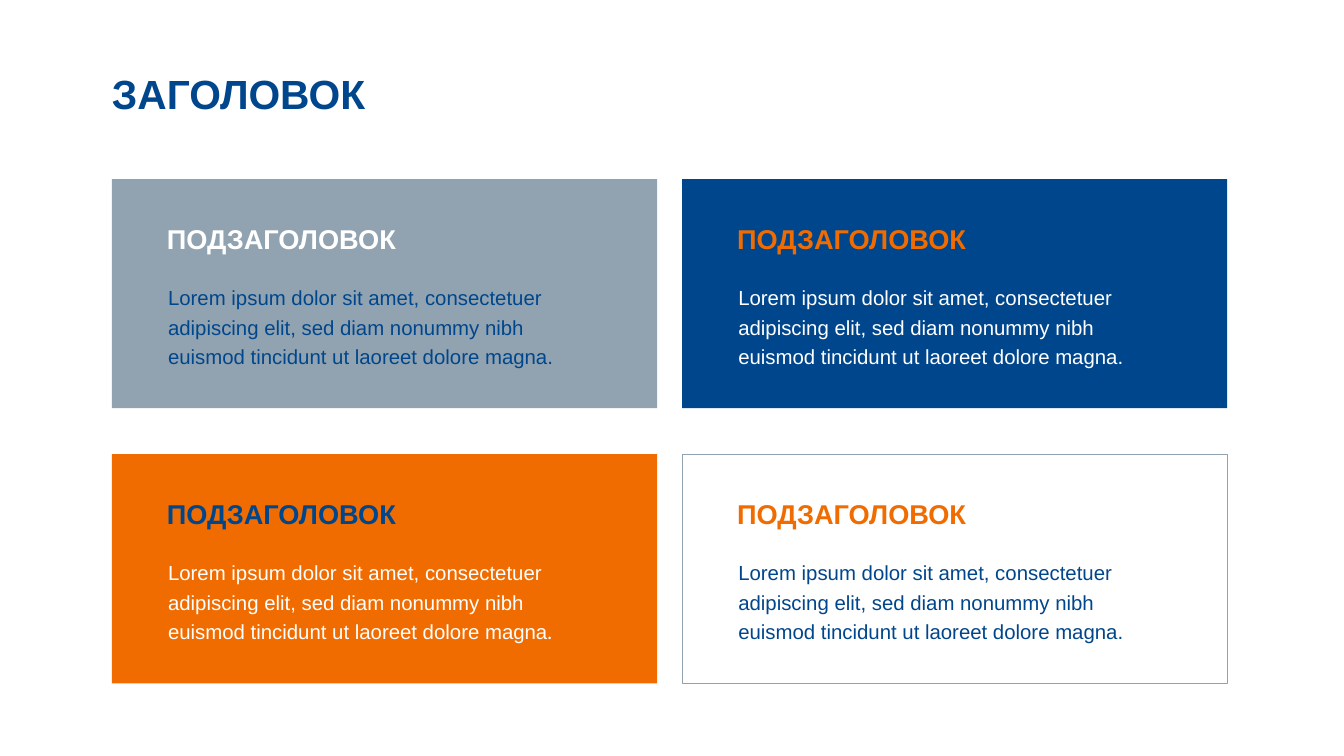
from dataclasses import dataclass

from pptx import Presentation
from pptx import util as u
from pptx.dml.color import RGBColor
from pptx.enum import shapes, text as t

PX = 9144  # EMU per px, at 100 px to the inch


@dataclass(frozen=True)
class Theme:
    blue: str = "00468C"
    orange: str = "F06C00"
    grey: str = "91A3B0"
    white: str = "FFFFFF"
    font: str = "Arial"
    stop_font: str = "Lato"
    title_size: int = 48
    heading_size: int = 32
    body_size: int = 24


theme = Theme()


def px(*lengths):
    return [u.Emu(length * PX) for length in lengths]


def write_text(shape, content, *, size, color, bold=False, indent=0,
               line_spacing=1.0, stop_font=theme.font):
    """Fill a shape with one paragraph; stop_font sets its last character."""
    frame = shape.text_frame
    frame.word_wrap = True
    frame.auto_size = t.MSO_AUTO_SIZE.NONE
    frame.vertical_anchor = t.MSO_ANCHOR.TOP
    frame.margin_left, frame.margin_top, frame.margin_right, frame.margin_bottom = px(indent, 2, 0, 0)
    paragraph = frame.paragraphs[0]
    paragraph.alignment = t.PP_ALIGN.LEFT
    paragraph.line_spacing = line_spacing
    parts = [(content, theme.font)]
    if stop_font != theme.font:
        parts = [(content[:-1], theme.font), (content[-1], stop_font)]
    for words, font_name in parts:
        run = paragraph.add_run()
        run.text = words
        run.font.name = font_name
        run.font.size = u.Pt(size)
        run.font.bold = bold
        run.font.color.rgb = RGBColor.from_string(color)


presentation = Presentation()
presentation.slide_width, presentation.slide_height = px(2199, 1237)
slide = presentation.slides.add_slide(presentation.slide_layouts[5])

title = slide.shapes.title
title.left, title.top, title.width, title.height = px(183, 110, 483, 83)
write_text(title, "ЗАГОЛОВОК", size=theme.title_size, color=theme.blue, bold=True)

BODY = ("Lorem ipsum dolor sit amet, consectetuer adipiscing elit, "
        "sed diam nonummy nibh euismod tincidunt ut laoreet dolore magna.")
LEFT, TOP = 183, 293
CARD_WIDTH, CARD_HEIGHT = 892, 375
COLUMN_STEP, ROW_STEP = 933, 450
INSET = 90

# fill, outline, heading colour, body colour, font of the full stop
cards = [
    (theme.grey, None, theme.white, theme.blue, theme.font),
    (theme.blue, None, theme.orange, theme.white, theme.font),
    (theme.orange, None, theme.blue, theme.white, theme.stop_font),
    (theme.white, theme.grey, theme.orange, theme.blue, theme.font),
]

for index, (fill, outline, heading_color, body_color, stop_font) in enumerate(cards):
    row, column = divmod(index, 2)
    left = LEFT + column * COLUMN_STEP
    top = TOP + row * ROW_STEP

    card = slide.shapes.add_shape(shapes.MSO_SHAPE.ROUNDED_RECTANGLE,
                                  *px(left, top, CARD_WIDTH, CARD_HEIGHT))
    card.adjustments[0] = 0
    card.shadow.inherit = False
    card.fill.solid()
    card.fill.fore_color.rgb = RGBColor.from_string(fill)
    if outline:
        card.line.color.rgb = RGBColor.from_string(outline)
        card.line.width = u.Pt(0.75)
    else:
        card.line.fill.background()

    heading = slide.shapes.add_textbox(*px(left + INSET, top + 69, 394, 56))
    write_text(heading, "ПОДЗАГОЛОВОК", size=theme.heading_size,
               color=heading_color, bold=True)

    body = slide.shapes.add_textbox(*px(left + INSET, top + 164, 694, 148))
    write_text(body, BODY, size=theme.body_size, color=body_color, indent=2,
               line_spacing=1.2, stop_font=stop_font)

presentation.save("out.pptx")
